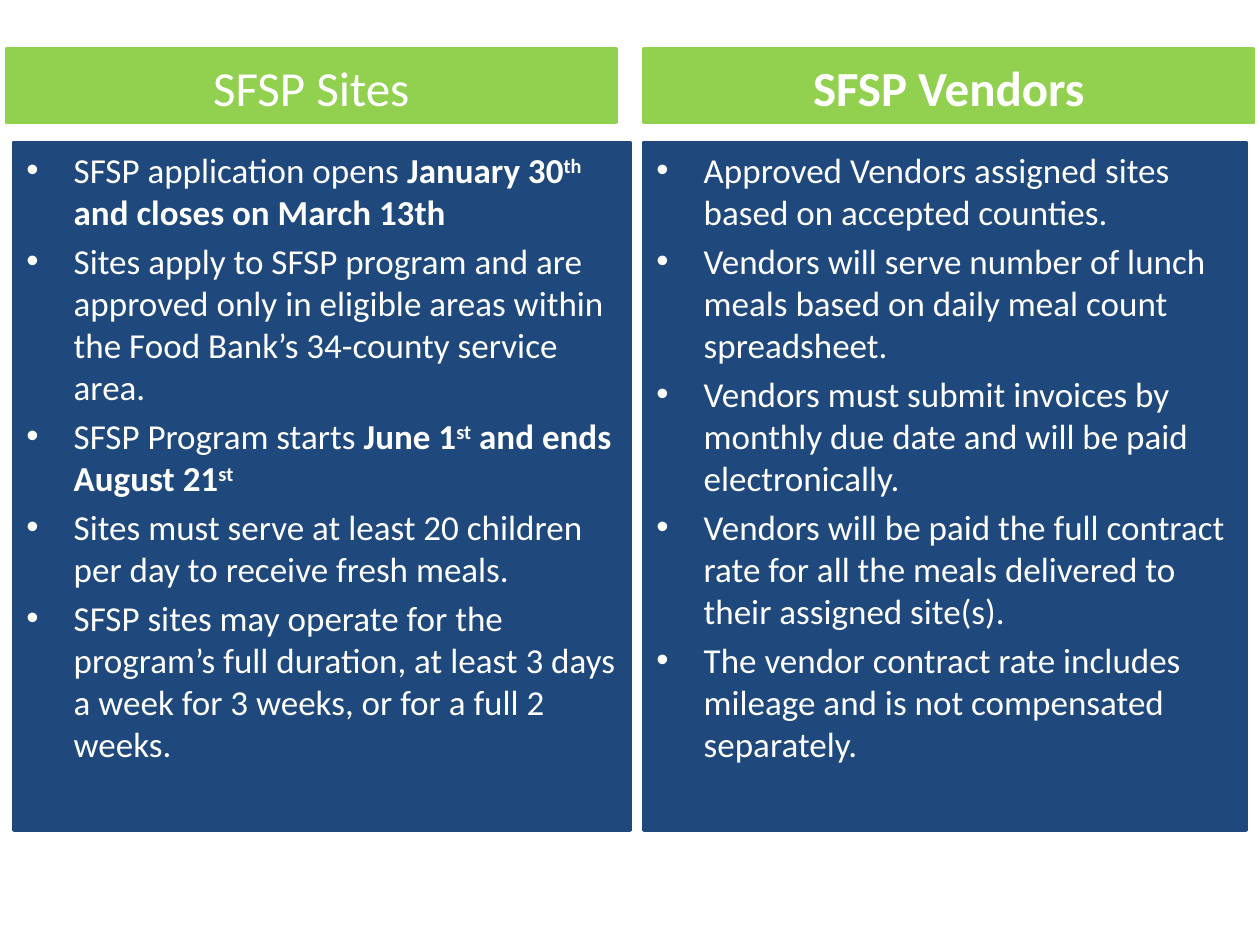
from dataclasses import dataclass
from pptx import Presentation
from pptx.dml.color import RGBColor
from pptx.enum.text import MSO_ANCHOR, MSO_AUTO_SIZE, PP_ALIGN
from pptx.util import Inches, Pt

HUES = {"head": "92D050", "panel": "1F497D", "text": "FFFFFF"}

# Each point is a list of (text, style) runs: b is bold, s is superscript
SITES = [
    [("SFSP application opens ", ""), ("January 30", "b"), ("th", "bs"),
     (" and closes on March 13th", "b")],
    [("Sites apply to SFSP program and are approved only in eligible areas "
      "within the Food Bank’s 34-county service area.", "")],
    [("SFSP Program starts ", ""), ("June 1", "b"), ("st", "bs"),
     (" and ends August 21", "b"), ("st", "bs")],
    [("Sites must serve at least 20 children per day to receive fresh meals.", "")],
    [("SFSP sites may operate for the program’s full duration, at least 3 days "
      "a week for 3 weeks, or for a full 2 weeks.", "")],
]
VENDORS = [[(line, "")] for line in (
    "Approved Vendors assigned sites based on accepted counties.",
    "Vendors will serve number of lunch meals based on daily meal count spreadsheet.",
    "Vendors must submit invoices by monthly due date and will be paid electronically.",
    "Vendors will be paid the full contract rate for all the meals delivered "
    "to their assigned site(s).",
    "The vendor contract rate includes mileage and is not compensated separately.",
)]


@dataclass
class Deck:
    slide: object
    face: str = "Calibri"

    def hue(self, name):
        return RGBColor.from_string(HUES[name])

    def block(self, idx, box, hue, anchor):
        """Place and colour one body placeholder."""
        shape = next(p for p in self.slide.placeholders
                     if p.placeholder_format.idx == idx)
        for key, val in zip(("left", "top", "width", "height"), box):
            setattr(shape, key, Inches(val))
        shape.fill.solid()
        shape.fill.fore_color.rgb = self.hue(hue)
        shape.line.color.rgb = self.hue(hue)
        shape.line.width = Pt(2)
        frame = shape.text_frame
        look = {"auto_size": MSO_AUTO_SIZE.NONE, "word_wrap": True,
                "vertical_anchor": anchor}
        for key, val in look.items():
            setattr(frame, key, val)
        return frame

    def run(self, para, text, size, style):
        run = para.add_run()
        run.text = text
        look = {"name": self.face, "size": Pt(size), "bold": "b" in style}
        for key, val in look.items():
            setattr(run.font, key, val)
        run.font.color.rgb = self.hue("text")
        if "s" in style:
            run.font._element.set("baseline", "30000")

    def head(self, idx, box, text, style):
        para = self.block(idx, box, "head", MSO_ANCHOR.BOTTOM).paragraphs[0]
        para.alignment = PP_ALIGN.CENTER
        para.space_before = Pt(0)
        self.run(para, text, 28, style)

    def panel(self, idx, box, points):
        """Fill a panel; bullets and indents come from the layout."""
        frame = self.block(idx, box, "panel", MSO_ANCHOR.TOP)
        for num, point in enumerate(points):
            para = frame.add_paragraph() if num else frame.paragraphs[0]
            para.space_before = Pt(4 if num else 0)
            for text, style in point:
                self.run(para, text, 20, style)


def main():
    prs = Presentation()
    prs.slide_width, prs.slide_height = Inches(10), Inches(7.5)

    # Comparison layout without its title
    slide = prs.slides.add_slide(prs.slide_layouts[4])
    title = slide.shapes.title._element
    title.getparent().remove(title)
    deck = Deck(slide)

    # Sites column
    deck.head(1, (0.05, 0.39, 4.84, 0.58), "SFSP Sites", "")
    deck.panel(2, (0.11, 1.13, 4.89, 5.46), SITES)

    # Vendors column
    deck.head(3, (5.11, 0.39, 4.84, 0.58), "SFSP Vendors", "b")
    deck.panel(4, (5.11, 1.13, 4.78, 5.46), VENDORS)

    prs.save("out.pptx")


if __name__ == "__main__":
    main()
